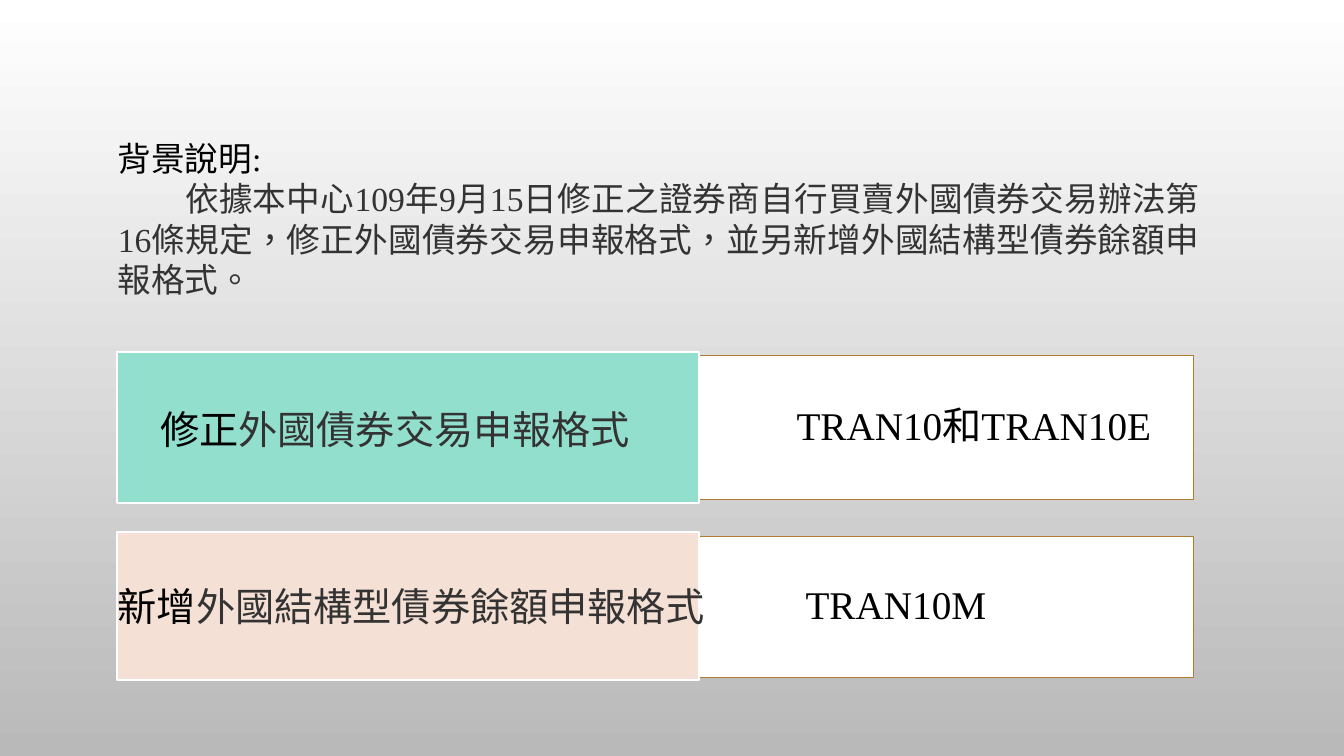
from pptx import Presentation
from pptx.dml.color import RGBColor
from pptx.enum.shapes import MSO_SHAPE
from pptx.enum.text import MSO_ANCHOR, MSO_AUTO_SIZE, PP_ALIGN
from pptx.util import Inches, Pt

FONT = "Times New Roman"
COLORS = {
    "black": "000000",
    "gray": "333333",
    "white": "FFFFFF",
    "backdrop": "B9B9B9",
    "border": "AE7D32",
    "mint": "93DFCE",
    "peach": "F5E0D6",
}


def rgb(name):
    return RGBColor.from_string(COLORS[name])


def set_background(s):
    fill = s.background.fill
    fill.gradient()
    fill.gradient_angle = 270
    for stop, name in zip(fill.gradient_stops, ("white", "backdrop")):
        stop.color.rgb = rgb(name)


def add_run(p, text, size, color):
    r = p.add_run()
    r.text = text
    r.font.name = FONT
    r.font.size = Pt(size)
    r.font.color.rgb = rgb(color)
    r._r.get_or_add_rPr().set("lang", "zh-TW")


def add_text_box(s, left, top, width, height):
    tf = s.shapes.add_textbox(
        Inches(left), Inches(top), Inches(width), Inches(height)).text_frame
    tf.word_wrap = True
    tf.auto_size = MSO_AUTO_SIZE.SHAPE_TO_FIT_TEXT
    return tf


def add_panel(s, left, top, width, height, fill, line, line_width):
    sp = s.shapes.add_shape(
        MSO_SHAPE.RECTANGLE,
        Inches(left), Inches(top), Inches(width), Inches(height))
    sp.shadow.inherit = False
    sp.fill.solid()
    sp.fill.fore_color.rgb = rgb(fill)
    sp.line.color.rgb = rgb(line)
    sp.line.width = Pt(line_width)
    return sp


def add_background_note(s):
    tf = add_text_box(s, 1.07, 1.32, 10.93, 1.72)
    heading = tf.paragraphs[0]
    heading.alignment = PP_ALIGN.JUSTIFY
    add_run(heading, "背景說明:", 24, "black")

    body = tf.add_paragraph()
    body.alignment = PP_ALIGN.JUSTIFY
    body._p.get_or_add_pPr().set("indent", str(Inches(0.67)))
    add_run(body, "依據本中心109年9月15日修正之證券商自行買賣外國債券交易辦法第16條規定，"
                  "修正外國債券交易申報格式，並另新增外國結構型債券餘額申報格式。", 24, "gray")


def add_format_code(s, code, left, top, height, inset):
    sp = add_panel(s, left, top, 11.84 - left, height, "white", "border", 0.75)
    tf = sp.text_frame
    tf.word_wrap = True
    tf.vertical_anchor = MSO_ANCHOR.MIDDLE
    tf.margin_left = Inches(inset)
    tf.margin_right = tf.margin_top = tf.margin_bottom = Inches(0.12)
    p = tf.paragraphs[0]
    p.alignment = PP_ALIGN.LEFT
    p.line_spacing = 0.9
    add_run(p, code, 28, "black")


def add_format_label(s, action, subject, left, top):
    p = add_text_box(s, left, top, 6.12, 0.57).paragraphs[0]
    add_run(p, action, 28, "black")
    add_run(p, subject, 28, "gray")


def main():
    prs = Presentation()
    prs.slide_width, prs.slide_height = Inches(13.33), Inches(7.5)
    s = prs.slides.add_slide(prs.slide_layouts[6])
    set_background(s)
    add_background_note(s)

    add_format_code(s, "TRAN10和TRAN10E", 6.93, 3.53, 1.43, 0.97)
    add_panel(s, 1.16, 3.49, 5.77, 1.5, "mint", "white", 1.25)
    add_format_code(s, "TRAN10M", 6.85, 5.32, 1.4, 1.14)
    add_panel(s, 1.16, 5.28, 5.77, 1.47, "peach", "white", 1.25)

    add_format_label(s, "修正", "外國債券交易申報格式", 1.49, 3.97)
    add_format_label(s, "新增", "外國結構型債券餘額申報格式", 1.07, 5.73)
    prs.save("out.pptx")


if __name__ == "__main__":
    main()
